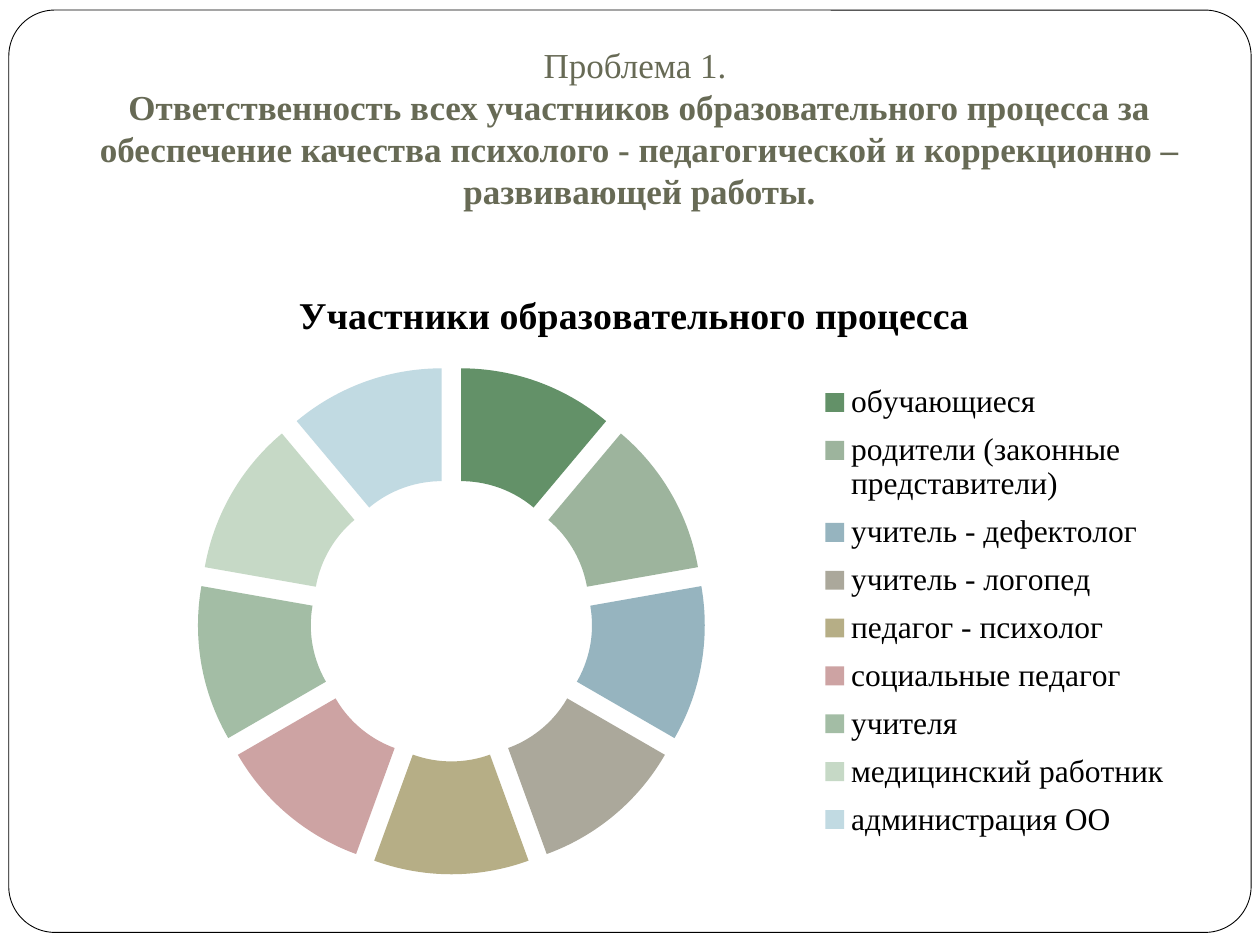
from lxml import etree
from pptx import Presentation
from pptx.chart.data import CategoryChartData
from pptx.dml.color import RGBColor
from pptx.enum.chart import XL_CHART_TYPE, XL_LEGEND_POSITION
from pptx.enum.shapes import MSO_SHAPE
from pptx.enum.text import MSO_ANCHOR, PP_ALIGN
from pptx.oxml.ns import qn
from pptx.util import Inches, Pt

DOUGHNUT = XL_CHART_TYPE.DOUGHNUT
RIGHT = XL_LEGEND_POSITION.RIGHT
ROUNDED = MSO_SHAPE.ROUNDED_RECTANGLE
BOTTOM = MSO_ANCHOR.BOTTOM
CENTER = PP_ALIGN.CENTER
FONT = "Times New Roman"
COLORS = {"white": "FFFFFF", "black": "000000", "title": "676A55"}
PARTICIPANTS = {
    "обучающиеся": "639168",
    "родители (законные представители)": "9DB49D",
    "учитель - дефектолог": "96B4BF",
    "учитель - логопед": "ABA89B",
    "педагог - психолог": "B6AE86",
    "социальные педагог": "CDA3A3",
    "учителя": "A3BDA5",
    "медицинский работник": "C6D9C6",
    "администрация ОО": "C1DAE2",
}
SHARE = 11


def rgb(name):
    """Return the colour for a palette name."""
    return RGBColor.from_string(COLORS[name])


def format_font(font, size, color="black", bold=False):
    """Set the face, size, colour and weight of a font."""
    font.name, font.size, font.bold = FONT, Pt(size), bold
    font.color.rgb = rgb(color)


def add_run(p, text, **fmt):
    """Append a formatted run to a paragraph."""
    r = p.add_run()
    r.text = text
    format_font(r.font, **fmt)


def add_frame(slide):
    """Draw the rounded frame around the slide."""
    sp = slide.shapes.add_shape(ROUNDED, Inches(0.07), Inches(0.08), Inches(9.86), Inches(7.32))
    sp.adjustments[0] = 0.05
    sp.shadow.inherit = False
    sp.fill.solid()
    sp.fill.fore_color.rgb = rgb("white")
    sp.line.color.rgb = rgb("black")
    sp.line.width = Pt(0.5)
    slide.shapes._spTree.insert(2, sp._element)


def set_title(slide):
    """Place and fill the title."""
    sp = slide.shapes.title
    sp.left, sp.top, sp.width, sp.height = map(Inches, (0.43, 0.3, 9.29, 1.48))
    tf = sp.text_frame
    tf.word_wrap = True
    tf.vertical_anchor = BOTTOM
    tf.margin_left = tf.margin_right = tf.margin_bottom = Inches(0.1)
    tf.margin_top = Inches(0.05)
    p = tf.paragraphs[0]
    p.alignment = CENTER
    add_run(p, "Проблема 1. ", size=20, color="title")
    p.add_line_break()
    add_run(p, "Ответственность всех участников образовательного процесса за "
            "обеспечение качества психолого - педагогической и коррекционно – "
            "развивающей работы.", size=20, color="title", bold=True)


def set_layout(element, index, target=None, **box):
    """Place a chart part by fractions of the chart area."""
    for old in element.findall(qn("c:layout")):
        element.remove(old)
    layout = etree.Element(qn("c:layout"))
    manual = etree.SubElement(layout, qn("c:manualLayout"))
    if target:
        etree.SubElement(manual, qn("c:layoutTarget"), val=target)
    for mode in ("xMode", "yMode"):
        etree.SubElement(manual, qn("c:" + mode), val="edge")
    for key, value in box.items():
        etree.SubElement(manual, qn("c:" + key), val=str(value))
    element.insert(index, layout)


def add_doughnut(slide):
    """Add the exploded doughnut of participants."""
    data = CategoryChartData()
    data.categories = list(PARTICIPANTS)
    data.add_series("Участники образовательного процесса", [SHARE] * len(PARTICIPANTS))
    chart = slide.shapes.add_chart(DOUGHNUT, Inches(0.35), Inches(2.1),
                                   Inches(9.37), Inches(5), data).chart
    format_font(chart.font, 18)
    chart.has_title = True
    add_run(chart.chart_title.text_frame.paragraphs[0],
            "Участники образовательного процесса", size=21.6, bold=True)
    chart.has_legend = True
    chart.legend.position = RIGHT
    chart.legend.include_in_layout = False
    format_font(chart.legend.font, 18)
    set_layout(chart.legend._element, 1, x=0.64, y=0.17, w=0.33, h=0.76)
    plot = chart.plots[0]
    set_layout(plot._element.getparent(), 0, "inner", x=0.13, y=0.16, w=0.43, h=0.81)
    plot.vary_by_categories = True
    plot.has_data_labels = False
    series = plot.series[0]
    series.format.line.fill.background()
    explosion = etree.Element(qn("c:explosion"), val="25")
    series._element.find(qn("c:spPr")).addnext(explosion)
    for i, color in enumerate(PARTICIPANTS.values()):
        fmt = series.points[i].format
        fmt.fill.solid()
        fmt.fill.fore_color.rgb = RGBColor.from_string(color)
        fmt.line.fill.background()


def main():
    """Build and save the slide."""
    prs = Presentation()
    prs.slide_width, prs.slide_height = Inches(10), Inches(7.5)
    slide = prs.slides.add_slide(prs.slide_layouts[5])
    add_frame(slide)
    set_title(slide)
    add_doughnut(slide)
    prs.save("out.pptx")


if __name__ == "__main__":
    main()
